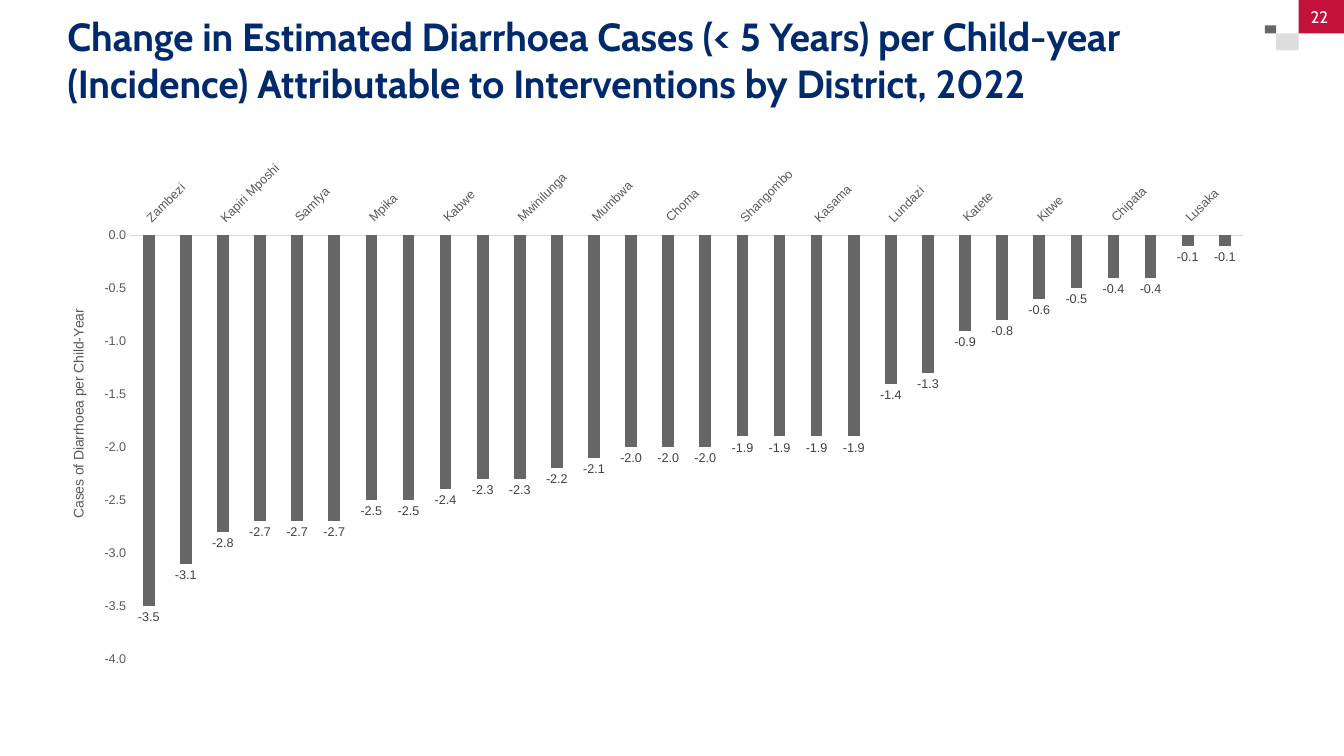
import collections

import lxml.etree
import pptx
import pptx.chart.data
import pptx.dml.color
import pptx.enum.chart
import pptx.enum.shapes
import pptx.enum.text
import pptx.oxml
import pptx.oxml.ns
import pptx.util

Cm = pptx.util.Cm
Pt = pptx.util.Pt
RGBColor = pptx.dml.color.RGBColor
qn = pptx.oxml.ns.qn

NAVY = RGBColor(0x00, 0x2A, 0x6C)
CRIMSON = RGBColor(0xC2, 0x11, 0x3A)
WHITE = RGBColor(0xFF, 0xFF, 0xFF)
BAR_GREY = RGBColor(0x66, 0x66, 0x66)
PALE_GREY = RGBColor(0xDD, 0xDD, 0xDD)
AXIS_TEXT = RGBColor(0x59, 0x59, 0x59)
AXIS_LINE = RGBColor(0xD9, 0xD9, 0xD9)
LABEL_TEXT = RGBColor(0x40, 0x40, 0x40)

HEADING_FONT = "Cabin"
CHART_FONT = "Arial"

Box = collections.namedtuple("Box", "left top width height")

TITLE_BOX = Box(1.7, 0.5, 30.2, 1.98)
CORNER_BOX = Box(31.88, 0, 1.99, 1.27)
CHART_BOX = Box(1.68, 3.45, 30.2, 13.61)

CASES_BY_DISTRICT = {
    "Zambezi": -3.5, "Solwezi": -3.1, "Kapiri Mposhi": -2.8,
    "Mansa": -2.7, "Samfya": -2.7, "Nchelenge": -2.7,
    "Mpika": -2.5, "Luwingu": -2.5, "Kabwe": -2.4,
    "Kalabo": -2.3, "Mwinilunga": -2.3, "Kaputa": -2.2,
    "Mumbwa": -2.1, "Mbala": -2.0, "Choma": -2.0,
    "Mongu": -2.0, "Shangombo": -1.9, "Monze": -1.9,
    "Kasama": -1.9, "Chinsali": -1.9, "Lundazi": -1.4,
    "Ndola": -1.3, "Katete": -0.9, "Kaoma": -0.8,
    "Kitwe": -0.6, "Petauke": -0.5, "Chipata": -0.4,
    "Isoka": -0.4, "Lusaka": -0.1, "Chibombo": -0.1,
}


def lengths(box):
    return [Cm(value) for value in box]


def style_font(font, name, size, color, bold=False):
    font.name = name
    font.size = Pt(size)
    font.color.rgb = color
    font.bold = bold


def add_text(page, box, text, size, color, align, bold=False):
    frame = page.shapes.add_textbox(*lengths(box)).text_frame
    frame.word_wrap = True
    frame.vertical_anchor = pptx.enum.text.MSO_ANCHOR.MIDDLE
    frame.margin_left = frame.margin_right = 0
    frame.margin_top = frame.margin_bottom = 0
    para = frame.paragraphs[0]
    para.alignment = align
    span = para.add_run()
    span.text = text
    style_font(span.font, HEADING_FONT, size, color, bold)


def add_title(page, box):
    text = ("Change in Estimated Diarrhoea Cases (< 5 Years) per Child-year "
            "(Incidence) Attributable to Interventions by District, 2022")
    add_text(page, box, text, 28, NAVY, pptx.enum.text.PP_ALIGN.LEFT, True)


def add_corner(page, box):
    number_box = Box(box.left + 0.85, box.top, 1.14, 0.84)
    blocks = [
        (Box(box.left, box.top + 0.64, 0.28, 0.2), BAR_GREY),
        (Box(box.left + 0.28, box.top + 0.84, 0.57, 0.43), PALE_GREY),
        (number_box, CRIMSON),
    ]
    for block_box, color in blocks:
        block = page.shapes.add_shape(
            pptx.enum.shapes.MSO_SHAPE.RECTANGLE, *lengths(block_box))
        block.shadow.inherit = False
        block.fill.solid()
        block.fill.fore_color.rgb = color
        block.line.fill.background()
    add_text(page, number_box._replace(width=1.04), "22", 12, WHITE,
             pptx.enum.text.PP_ALIGN.CENTER)


def set_plot_layout(chart, x, y, w, h):
    plot_area = chart._chartSpace.chart.plotArea
    for old in plot_area.findall(qn("c:layout")):
        plot_area.remove(old)
    layout = lxml.etree.Element(qn("c:layout"))
    manual = lxml.etree.SubElement(layout, qn("c:manualLayout"))
    settings = {"layoutTarget": "inner", "xMode": "edge", "yMode": "edge",
                "x": x, "y": y, "w": w, "h": h}
    for tag, value in settings.items():
        lxml.etree.SubElement(manual, qn(f"c:{tag}")).set("val", str(value))
    plot_area.insert(0, layout)


def style_district_axis(axis):
    axis.major_tick_mark = pptx.enum.chart.XL_TICK_MARK.NONE
    axis.tick_label_position = pptx.enum.chart.XL_TICK_LABEL_POSITION.HIGH
    axis.format.line.color.rgb = AXIS_LINE
    axis.format.line.width = Pt(0.75)
    style_font(axis.tick_labels.font, CHART_FONT, 9, AXIS_TEXT)
    body = axis._element.find(qn("c:txPr")).find(qn("a:bodyPr"))
    body.set("rot", "-2700000")
    body.set("vert", "horz")
    skip = lxml.etree.Element(qn("c:tickLblSkip"))
    skip.set("val", "2")
    axis._element.find(qn("c:noMultiLvlLbl")).addprevious(skip)


def style_cases_axis(axis):
    axis.minimum_scale = -4
    axis.maximum_scale = 0
    axis.major_unit = 0.5
    axis.has_major_gridlines = False
    axis.major_tick_mark = pptx.enum.chart.XL_TICK_MARK.NONE
    axis.format.line.fill.background()
    axis.tick_labels.number_format = "0.0"
    axis.tick_labels.number_format_is_linked = False
    style_font(axis.tick_labels.font, CHART_FONT, 9, AXIS_TEXT)
    frame = axis.axis_title.text_frame
    span = frame.paragraphs[0].add_run()
    span.text = "Cases of Diarrhoea per Child-Year"
    style_font(span.font, CHART_FONT, 10, AXIS_TEXT)
    body = frame._txBody.find(qn("a:bodyPr"))
    body.set("rot", "-5400000")
    body.set("vert", "horz")


def style_bars(plot):
    plot.gap_width = 219
    plot.overlap = -27
    plot.vary_by_categories = False
    bars = plot.series[0]
    bars.invert_if_negative = False
    bars.format.fill.solid()
    bars.format.fill.fore_color.rgb = BAR_GREY
    labels = bars.data_labels
    labels.show_value = True
    labels.position = pptx.enum.chart.XL_LABEL_POSITION.OUTSIDE_END
    labels.number_format = "0.0"
    labels.number_format_is_linked = False
    style_font(labels.font, CHART_FONT, 9, LABEL_TEXT)


def add_cases_chart(page, box):
    data = pptx.chart.data.CategoryChartData(number_format="0.0")
    data.categories = list(CASES_BY_DISTRICT)
    data.add_series("Series 1", list(CASES_BY_DISTRICT.values()))
    chart = page.shapes.add_chart(
        pptx.enum.chart.XL_CHART_TYPE.COLUMN_CLUSTERED,
        *lengths(box), data).chart
    chart.has_title = False
    chart.has_legend = False
    style_font(chart.font, CHART_FONT, 10, AXIS_TEXT)
    set_plot_layout(chart, 0.053, 0.182, 0.929, 0.785)
    style_district_axis(chart.category_axis)
    style_cases_axis(chart.value_axis)
    style_bars(chart.plots[0])


def main():
    deck = pptx.Presentation()
    deck.slide_width = Cm(33.87)
    deck.slide_height = Cm(19.05)
    page = deck.slides.add_slide(deck.slide_layouts[6])
    add_corner(page, CORNER_BOX)
    add_title(page, TITLE_BOX)
    add_cases_chart(page, CHART_BOX)
    deck.save("out.pptx")


if __name__ == "__main__":
    main()
